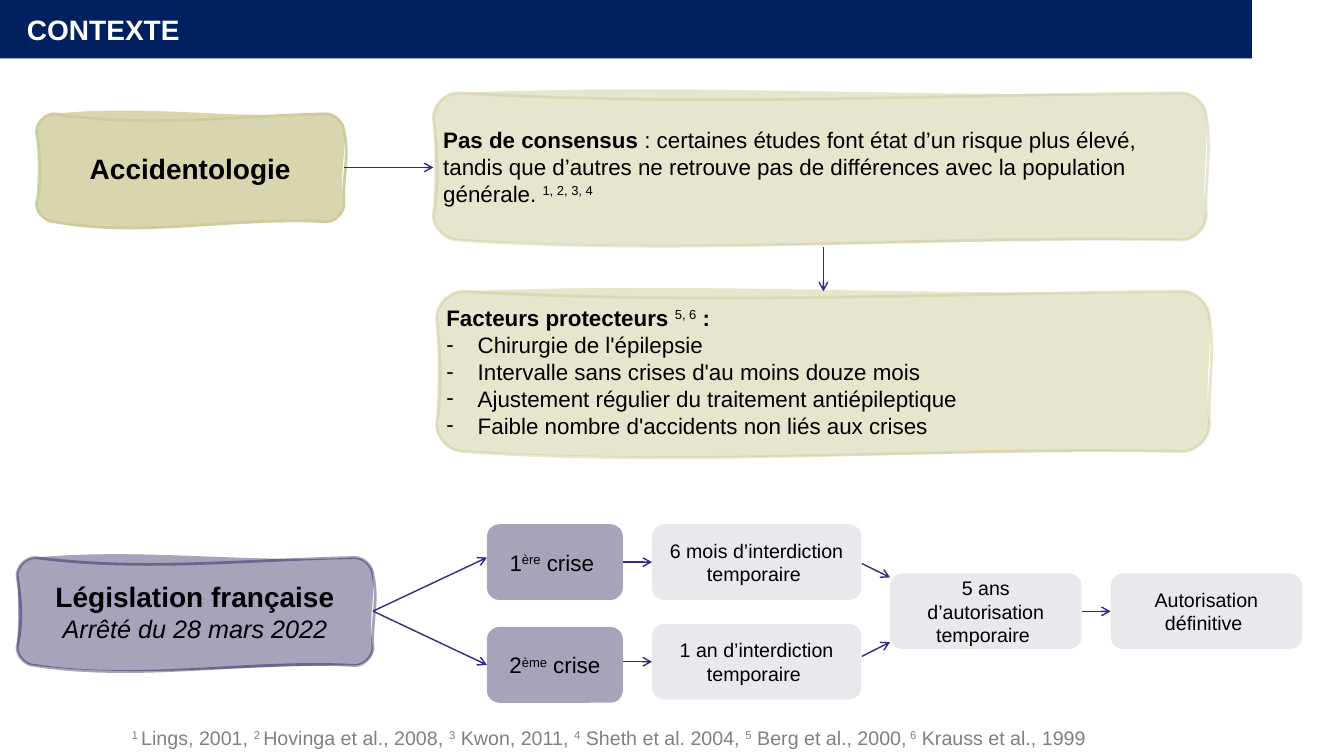
from lxml import etree
from pptx import Presentation
from pptx.dml.color import RGBColor
from pptx.enum import shapes as es, text as et
from pptx.oxml import ns
from pptx.util import Cm, Pt

NAVY = RGBColor(0x00, 0x20, 0x60)
INK = RGBColor(0x09, 0x00, 0x42)
SAND = RGBColor(0xCF, 0xCC, 0x9C)
ARROW = RGBColor(0x2F, 0x2A, 0x85)
GREY = RGBColor(0x80, 0x80, 0x80)
BLACK = RGBColor(0, 0, 0)
WHITE = RGBColor(0xFF, 0xFF, 0xFF)

LEFT, MID = et.PP_ALIGN.LEFT, et.PP_ALIGN.CENTER
BOLD = {"bold": True}
TALL = 1.91
STROKE = [((0, 0.36), (0, 0.05)), ((0.15, 0), (-0.05, 0)),
          ((0, -0.15), (0, 0.41)), ((0.15, 0), (0.1, 0))]
BODY = [((0, -0.25), (0, 0.15)), ((0.05, 0), (-0.13, 0)),
        ((0, -0.03), (0, 0.33)), ((0.03, 0), (0.05, 0))]


def sub(node, tag, **attrs):
    """Append a drawing element."""
    return etree.SubElement(node, ns.qn("a:" + tag), **attrs)


def paint(fill, host, tone, pct=100):
    """Fill with a solid tone; host holds the fill element."""
    fill.solid()
    fill.fore_color.rgb = tone
    if pct < 100:
        sub(host.find(ns.qn("a:solidFill"))[0], "alpha", val=str(pct * 1000))


def write(shape, paras, size, tone=BLACK, align=MID, dash=False):
    """Write paragraphs of (text, style) runs; dash marks all but the first."""
    frame = shape.text_frame
    frame.word_wrap = True
    for i, runs in enumerate(paras):
        para = frame.paragraphs[0] if i == 0 else frame.add_paragraph()
        para.alignment = align
        if dash and i:
            props = para._p.get_or_add_pPr()
            props.set("marL", str(Cm(0.79)))
            props.set("indent", str(-Cm(0.79)))
            sub(props, "buFont", typeface="Arial")
            sub(props, "buChar", char="-")
        for words, style in runs:
            run = para.add_run()
            run.text = words
            look = {"name": "Arial", "size": Pt(size), **style}
            lift = look.pop("lift", False)
            for key, val in look.items():
                setattr(run.font, key, val)
            run.font.color.rgb = tone
            if lift:
                run.font._rPr.set("baseline", "30000")


def cite(pairs):
    """Turn (text, mark) pairs into plain runs with raised marks."""
    return [(words, {"lift": lift})
            for pair in pairs for words, lift in zip(pair, (False, True)) if words]


def mix(a, b, t):
    """Return the point at share t of the way from a to b."""
    return tuple(p + (q - p) * t for p, q in zip(a, b))


def rough(w, h, waves):
    """Return the start and the curves of a rounded box with wavy sides."""
    r = h / 6
    tips = [(0, 0), (w, 0), (w, h), (0, h)]
    ends = [((0, r), (r, 0)), ((w - r, 0), (w, r)),
            ((w, h - r), (w - r, h)), ((r, h), (0, h - r))]
    bends = []
    for i, (tip, (a, d)) in enumerate(zip(tips, ends)):
        goal = ends[(i + 1) % 4][0]
        grips = [tuple(p + o for p, o in zip(mix(d, goal, t), off))
                 for t, off in zip((1 / 3, 2 / 3), waves[i])]
        bends += [(mix(a, tip, 0.5), mix(d, tip, 0.5), d), (*grips, goal)]
    return ends[0][0], bends


def trace(paths, w, h, waves, **flags):
    """Add one curved path to a shape's path list."""
    path = sub(paths, "path", w=str(Cm(w)), h=str(Cm(h)), **flags)
    start, bends = rough(w, h, waves)
    for tag, dots in [("moveTo", [start]), *(("cubicBezTo", b) for b in bends)]:
        node = sub(path, tag)
        for x, y in dots:
            sub(node, "pt", x=str(Cm(x)), y=str(Cm(y)))
    sub(path, "close")


def sketch(slide, box, tone, pct, edge):
    """Draw a hand-drawn card: one stroked outline, one filled body."""
    x, y, w, h = box
    pen = slide.shapes.build_freeform(Cm(x), Cm(y), scale=1.0)
    pen.add_line_segments([(Cm(x + w), Cm(y)), (Cm(x + w), Cm(y + h)),
                           (Cm(x), Cm(y + h))], close=True)
    card = pen.convert_to_shape()
    paths = card._element.xpath(".//a:pathLst")[0]
    paths.remove(paths[0])
    trace(paths, w, h, STROKE, fill="none")
    trace(paths, w, h, BODY, stroke="0")
    card.shadow.inherit = False
    paint(card.fill, card._element.spPr, tone, pct)
    paint(card.line.fill, card.line._get_or_add_ln(), tone, edge)
    card.line.width = Pt(2)
    card.text_frame.vertical_anchor = et.MSO_ANCHOR.MIDDLE
    return card


def block(slide, kind, box, tone, pct=100):
    """Add a preset shape without a line."""
    shape = slide.shapes.add_shape(kind, *map(Cm, box))
    shape.shadow.inherit = False
    paint(shape.fill, shape._element.spPr, tone, pct)
    shape.line.fill.background()
    shape.text_frame.vertical_anchor = et.MSO_ANCHOR.MIDDLE
    return shape


def step(slide, x, y, w, runs, size, pct):
    """Add one rounded step of the legal timeline."""
    shape = block(slide, es.MSO_SHAPE.ROUNDED_RECTANGLE, (x, y, w, TALL), INK, pct)
    write(shape, [runs], size)
    return shape


def arrow(slide, start, stop, head=None, tail=None):
    """Draw an arrow, joined to the right of head and the left of tail."""
    link = slide.shapes.add_connector(
        es.MSO_CONNECTOR.STRAIGHT, *map(Cm, (*start, *stop)))
    if head:
        link.begin_connect(head, 3)
    if tail:
        link.end_connect(tail, 1)
    link.line.color.rgb = ARROW
    link.line.width = Pt(1)
    sub(link.line._get_or_add_ln(), "tailEnd", type="arrow")
    sub(link._element.spPr, "effectLst")


def label(slide, box, *args):
    """Add a text box."""
    write(slide.shapes.add_textbox(*map(Cm, box)), *args)


def banner(slide, w, h):
    """Draw the title bar."""
    block(slide, es.MSO_SHAPE.RECTANGLE, (0, 0, w, h), NAVY)
    label(slide, (0.43, 0.18, 5.28, 1.12), [[("CONTEXTE", BOLD)]], 20, WHITE, LEFT)


def crash(slide, x, y):
    """Draw the accident cards."""
    topic = sketch(slide, (x, y + 0.53, 7.75, 2.72), SAND, 80, 100)
    write(topic, [[("Accidentologie", BOLD)]], 20)
    view = sketch(slide, (x + 10, y, 19.48, 3.71), SAND, 50, 50)
    write(view, [[("Pas de consensus ", BOLD), *cite([
        (": certaines études font état d’un risque plus élevé, tandis que d’autres "
         "ne retrouve pas de différences avec la population générale. ",
         "1, 2, 3, 4")])]], 16, BLACK, LEFT)
    guard = sketch(slide, (x + 10.08, y + 5, 19.48, 4.04), SAND, 50, 50)
    facts = ["Chirurgie de l'épilepsie", "Intervalle sans crises d'au moins douze mois",
             "Ajustement régulier du traitement antiépileptique",
             "Faible nombre d'accidents non liés aux crises"]
    write(guard, [[("Facteurs protecteurs ", BOLD), ("5, 6", {"lift": True}), (" :", BOLD)],
                  *([(fact, {})] for fact in facts)], 16, BLACK, LEFT, True)
    arrow(slide, (x + 7.76, y + 1.88), (x + 10, y + 1.88))
    arrow(slide, (x + 19.83, y + 3.88), (x + 19.83, y + 5))


def law(slide, x, y):
    """Draw the legal timeline."""
    topic = sketch(slide, (x, y + 0.84, 8.97, 2.72), INK, 36, 36)
    write(topic, [[("Législation française", BOLD)],
                  [("Arrêté du 28 mars 2022", {"italic": True, "size": Pt(18)})]], 20)
    one = step(slide, x + 11.84, y, 3.43, cite([("1", "ère"), (" crise ", "")]), 16, 36)
    two = step(slide, x + 11.84, y + 2.59, 3.43, cite([("2", "ème"), (" crise", "")]), 16, 36)
    half, year, five, free = [
        step(slide, x + dx, y + dy, w, [(words, {})], 14, 9) for dx, dy, w, words in [
            (16, 0, 5.28, "6 mois d’interdiction temporaire "),
            (16, 2.51, 5.28, "1 an d’interdiction temporaire "),
            (22, 1.24, 4.83, "5 ans d’autorisation temporaire "),
            (27.56, 1.24, 4.83, "Autorisation définitive ")]]
    fork = (x + 8.97, y + 2.19)
    for start, stop, head, tail in [
            (fork, (x + 11.84, y + 0.84), None, None),
            (fork, fork, None, two),
            (fork, fork, one, half),
            ((x + 15.27, y + 2.51 + TALL / 2), fork, None, year),
            ((x + 21.29, y + 0.99), (x + 22, y + 1.34), None, None),
            ((x + 21.29, y + 3.33), (x + 22, y + 2.97), None, None),
            (fork, fork, five, free)]:
        arrow(slide, start, stop, head, tail)


def notes(slide, x, y):
    """Write the references line."""
    runs = cite([("", "1 "), ("Lings, 2001, ", "2 "), ("Hovinga et al., 2008, ", "3"),
                 (" Kwon, 2011, ", "4"), (" Sheth et al. 2004, ", "5"),
                 (" Berg et al., 2000,", " 6"), (" Krauss et al., 1999", "")])
    label(slide, (x, y, 30.5, 0.86), [runs], 14, GREY, LEFT)


def main():
    """Build the slide."""
    deck = Presentation()
    deck.slide_width, deck.slide_height = Cm(33.87), Cm(19.05)
    slide = deck.slides.add_slide(deck.slide_layouts[6])
    banner(slide, 31.55, 1.47)
    crash(slide, 0.92, 2.34)
    law(slide, 0.43, 13.21)
    notes(slide, 3.07, 18.16)
    deck.save("out.pptx")


if __name__ == "__main__":
    main()
